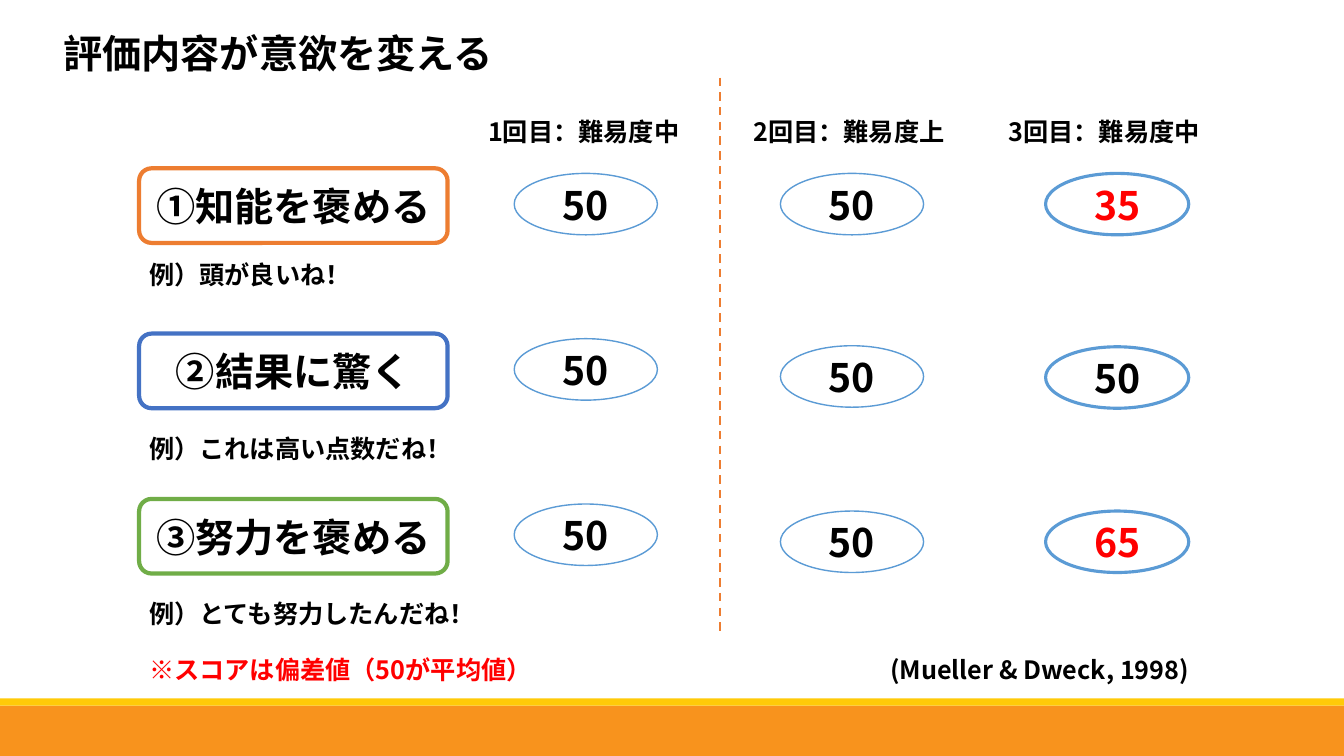
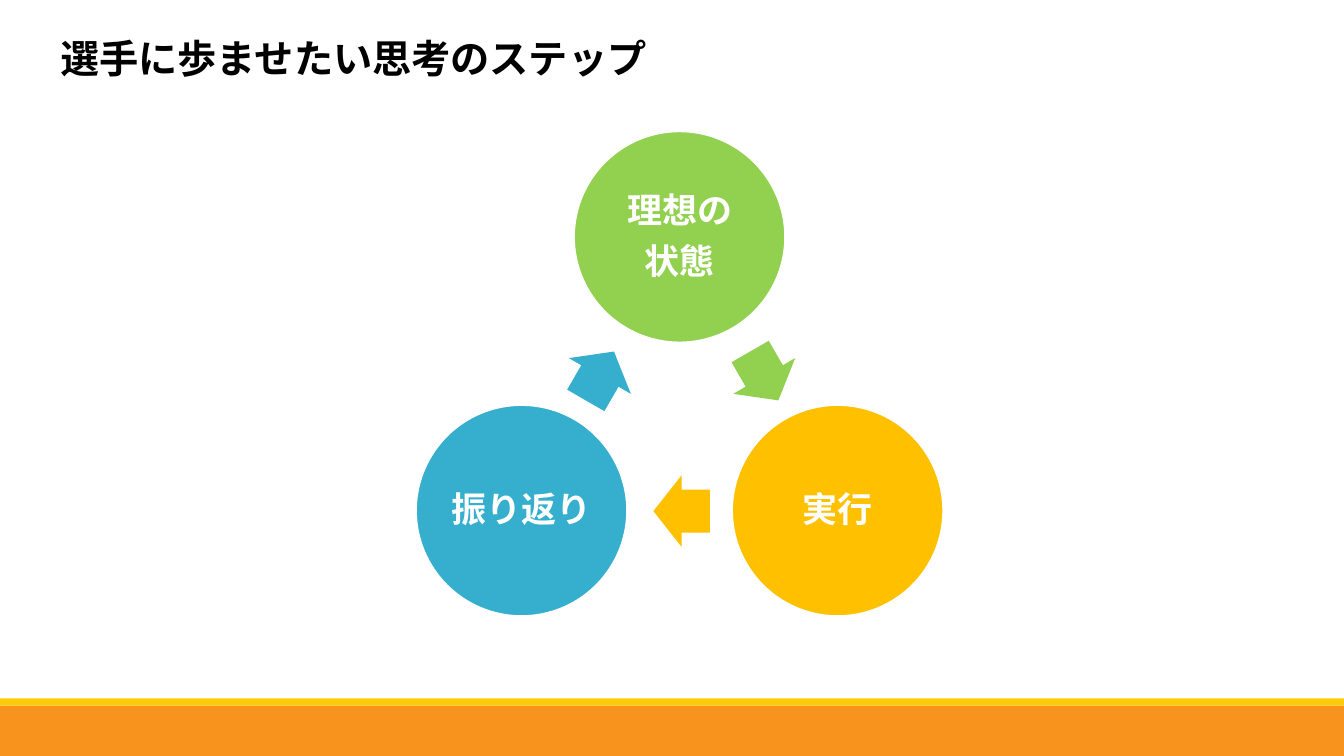
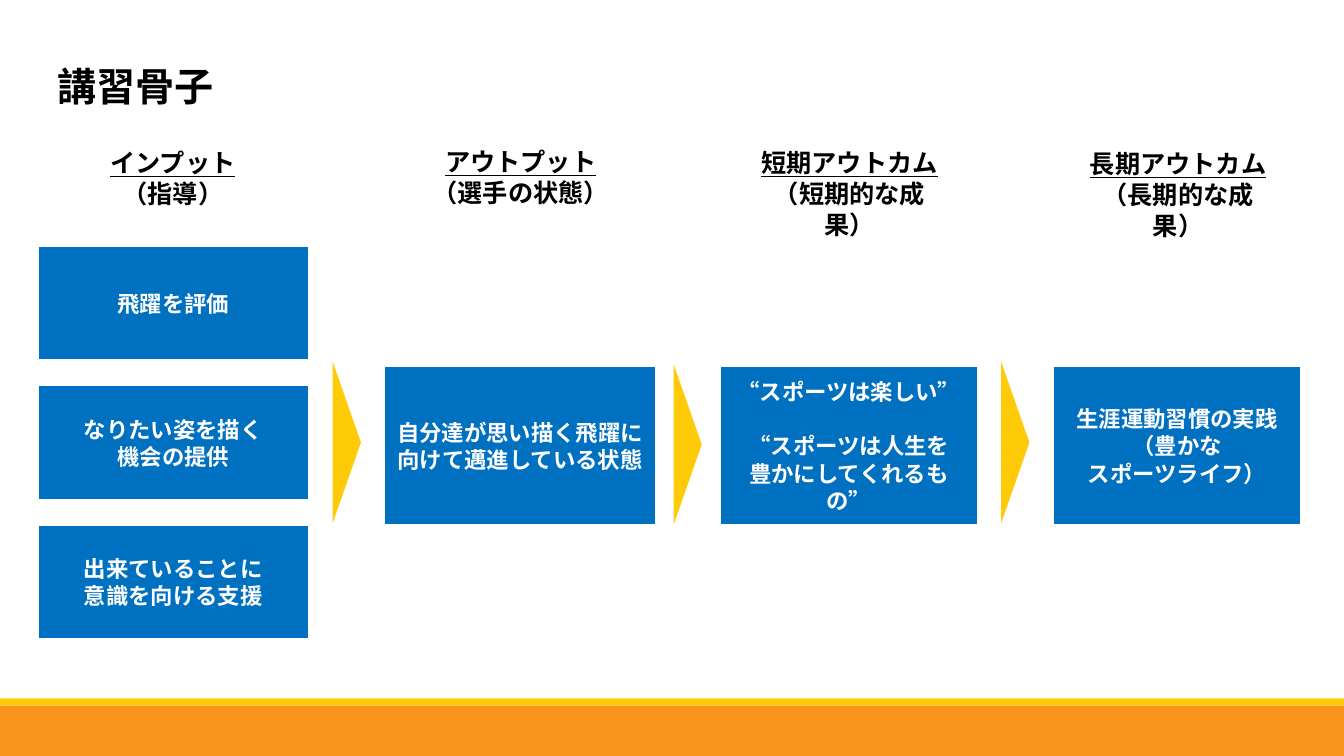
"""Build three coaching slides on praise, reflection and course outcomes."""
import dataclasses
import math

import lxml.etree
import pptx
import pptx.dml.color
import pptx.enum.dml
import pptx.enum.shapes
import pptx.enum.text
import pptx.oxml.ns
import pptx.util

Inches = pptx.util.Inches
Pt = pptx.util.Pt
Shapes = pptx.enum.shapes.MSO_SHAPE
Align = pptx.enum.text.PP_ALIGN
Anchor = pptx.enum.text.MSO_ANCHOR


@dataclasses.dataclass(frozen=True)
class Theme:
    """Colours, fonts and type sizes of the deck."""
    black: str = "000000"
    white: str = "FFFFFF"
    red: str = "FF0000"
    orange: str = "ED7D31"
    blue: str = "4472C4"
    green: str = "70AD47"
    score: str = "5B9BD5"
    band: str = "F8931D"
    yellow: str = "FFCA08"
    ideal: str = "92D050"
    action: str = "FFC000"
    review: str = "36AFCE"
    outcome: str = "0070C0"
    font: str = "Noto Sans CJK JP"
    heading_font: str = "Calibri"
    title: int = 28
    circle: int = 25
    body: int = 18
    box: int = 16
    line_pitch: float = 1.22


theme = Theme()


def add_box(slide, kind, left, top, width, height, fill=None, line=None, line_width=1):
    """Add a preset shape, or a text box when kind is None."""
    place = [Inches(length) for length in (left, top, width, height)]
    if kind is None:
        shape = slide.shapes.add_textbox(*place)
        shape.text_frame.word_wrap = True
        return shape
    shape = slide.shapes.add_shape(kind, *place)
    shape.shadow.inherit = False
    shape.fill.solid()
    shape.fill.fore_color.rgb = pptx.dml.color.RGBColor.from_string(fill)
    if line:
        shape.line.color.rgb = pptx.dml.color.RGBColor.from_string(line)
        shape.line.width = Pt(line_width)
    else:
        shape.line.fill.background()
    return shape


def write(shape, text, size, color=theme.black, align=Align.CENTER,
          anchor=Anchor.MIDDLE, font=theme.font, spacing=1.0):
    """Fill a shape with bold text, one paragraph a line."""
    frame = shape.text_frame
    frame.text = text
    frame.vertical_anchor = anchor
    for paragraph in frame.paragraphs:
        paragraph.alignment = align
        paragraph.line_spacing = Pt(round(size * theme.line_pitch * spacing, 1))
        for run in paragraph.runs:
            run.font.size = Pt(size)
            run.font.bold = True
            run.font.color.rgb = pptx.dml.color.RGBColor.from_string(color)
            run.font.name = font
            latin = run.font._element.find(pptx.oxml.ns.qn("a:latin"))
            east_asian = lxml.etree.Element(pptx.oxml.ns.qn("a:ea"), typeface=theme.font)
            latin.addnext(east_asian)
    return frame


presentation = pptx.Presentation()
presentation.slide_width = Inches(13.33)
presentation.slide_height = Inches(7.5)
blank = presentation.slide_layouts[6]
praise, cycle, outline = [presentation.slides.add_slide(blank) for number in range(3)]

for top, height, color in ((7, 0.5, theme.band), (6.93, 0.07, theme.yellow)):
    band = add_box(praise, Shapes.RECTANGLE, 0, top, 13.33, height, color)
    presentation.slide_master.shapes.element.append(band.element)

titles = (
    (praise, "評価内容が意欲を変える", 0.53, 0.23, 0.57, 1),
    (cycle, "選手に歩ませたい思考のステップ", 0.5, 0.28, 0.57, 1),
    (outline, "講習骨子", 0.47, 0.33, 0.74, 1.5),
)
for slide, text, left, top, height, spacing in titles:
    title = add_box(slide, None, left, top, 9.6, height)
    write(title, text, theme.title, align=Align.LEFT, anchor=Anchor.TOP, spacing=spacing)

methods = (
    ("①知能を褒める", theme.orange, "例）頭が良いね！", 2.52),
    ("②結果に驚く", theme.blue, "例）これは高い点数だね！", 4.24),
    ("③努力を褒める", theme.green, "例）とても努力したんだね！", 5.88),
)
for row, (name, color, example, example_top) in enumerate(methods):
    label = add_box(praise, Shapes.ROUNDED_RECTANGLE, 1.38, 1.67 + 1.64 * row, 3.06, 0.74,
                    theme.white, color, 3)
    write(label, name, theme.title)
    caption = add_box(praise, None, 1.38, example_top, 5.5, 0.4)
    write(caption, example, theme.body, align=Align.LEFT, anchor=Anchor.TOP)

rounds = (
    ("1回目：難易度中", 4.66, 5.1, 1, (1.72, 3.36, 5), ("50", "50", "50")),
    ("2回目：難易度上", 7.29, 7.74, 1, (1.72, 3.43, 5.07), ("50", "50", "50")),
    ("3回目：難易度中", 9.82, 10.37, 2.25, (1.72, 3.44, 5.07), ("35", "50", "65")),
)
for name, header_left, score_left, line_width, tops, scores in rounds:
    header = add_box(praise, None, header_left, 0.93, 2.26, 0.74)
    write(header, name, theme.body)
    for top, score in zip(tops, scores):
        oval = add_box(praise, Shapes.OVAL, score_left, top, 1.42, 0.61,
                       theme.white, theme.score, line_width)
        write(oval, score, theme.title, theme.black if score == "50" else theme.red)

divider = praise.shapes.add_connector(
    pptx.enum.shapes.MSO_CONNECTOR.STRAIGHT,
    Inches(7.14), Inches(0.77), Inches(7.14), Inches(6.28))
divider.line.color.rgb = pptx.dml.color.RGBColor.from_string(theme.orange)
divider.line.width = Pt(1.5)
divider.line.dash_style = pptx.enum.dml.MSO_LINE.DASH
lxml.etree.SubElement(divider.element.spPr, pptx.oxml.ns.qn("a:effectLst"))

footnotes = (
    ("※スコアは偏差値（50が平均値）", 1.38, 4.28, theme.red),
    ("(Mueller & Dweck, 1998)", 8.73, 3.87, theme.black),
)
for text, left, width, color in footnotes:
    footnote = add_box(praise, None, left, 6.44, width, 0.4)
    write(footnote, text, theme.body, color, Align.LEFT, Anchor.TOP)

diameter, orbit, center_x, center_y = 2.09, 1.81, 6.74, 4.16
arrow_width, arrow_height = 0.56, 0.71
steps = (
    ("理想の\n状態", theme.ideal, 7.58, 3.73),
    ("実行", theme.action, 6.76, 5.07),
    ("振り返り", theme.review, 5.95, 3.73),
)
for index, (text, color, arrow_x, arrow_y) in enumerate(steps):
    angle = math.radians(120 * index - 90)
    left = center_x + orbit * math.cos(angle) - diameter / 2
    top = center_y + orbit * math.sin(angle) - diameter / 2
    circle = add_box(cycle, Shapes.OVAL, left, top, diameter, diameter, color, theme.white)
    frame = write(circle, text, theme.circle, theme.white,
                  font=theme.heading_font, spacing=0.9)
    frame.margin_left = frame.margin_right = frame.margin_top = frame.margin_bottom = 0
    for paragraph in frame.paragraphs:
        paragraph.space_after = Pt(8.75)
    arrow = add_box(cycle, Shapes.RIGHT_ARROW, arrow_x - arrow_width / 2,
                    arrow_y - arrow_height / 2, arrow_width, arrow_height, color)
    arrow.adjustments[0] = 0.6
    arrow.adjustments[1] = 0.5
    arrow.rotation = 60 + 120 * index

headings = (
    ("インプット\n（指導）", 0.68, 1.41),
    ("アウトプット\n（選手の状態）", 4.13, 1.4),
    ("短期アウトカム\n（短期的な成果）", 7.39, 1.41),
    ("長期アウトカム\n（長期的な成果）", 10.65, 1.42),
)
for text, left, top in headings:
    heading = add_box(outline, None, left, top, 2.07, 0.71)
    frame = write(heading, text, theme.body, anchor=Anchor.TOP, font=theme.heading_font)
    frame.paragraphs[0].runs[0].font.underline = True

inputs = ("飛躍を評価", "なりたい姿を描く\n機会の提供", "出来ていることに\n意識を向ける支援")
stages = [(text, 0.37, 2.44 + 1.38 * row, 2.7, 1.14) for row, text in enumerate(inputs)]
stages += [
    ("自分達が思い描く飛躍に向けて邁進している状態", 3.81, 3.63, 2.7, 1.58),
    ("生涯運動習慣の実践\n（豊かな\nスポーツライフ）", 10.44, 3.63, 2.47, 1.58),
    ("“スポーツは楽しい”\n“スポーツは人生を\n豊かにしてくれるもの”", 7.14, 3.63, 2.56, 1.58),
]
for text, left, top, width, height in stages:
    stage = add_box(outline, Shapes.RECTANGLE, left, top, width, height,
                    theme.outcome, theme.white, 2)
    frame = write(stage, text, theme.box, theme.white)
    if text.startswith("“"):
        frame.paragraphs[1].space_before = Pt(theme.box * theme.line_pitch)

for left, top in ((2.64, 4.25), (6.02, 4.27), (9.27, 4.25)):
    pointer = add_box(outline, Shapes.ISOSCELES_TRIANGLE, left, top, 1.6, 0.28, theme.yellow)
    pointer.rotation = 90

presentation.save("out.pptx")
